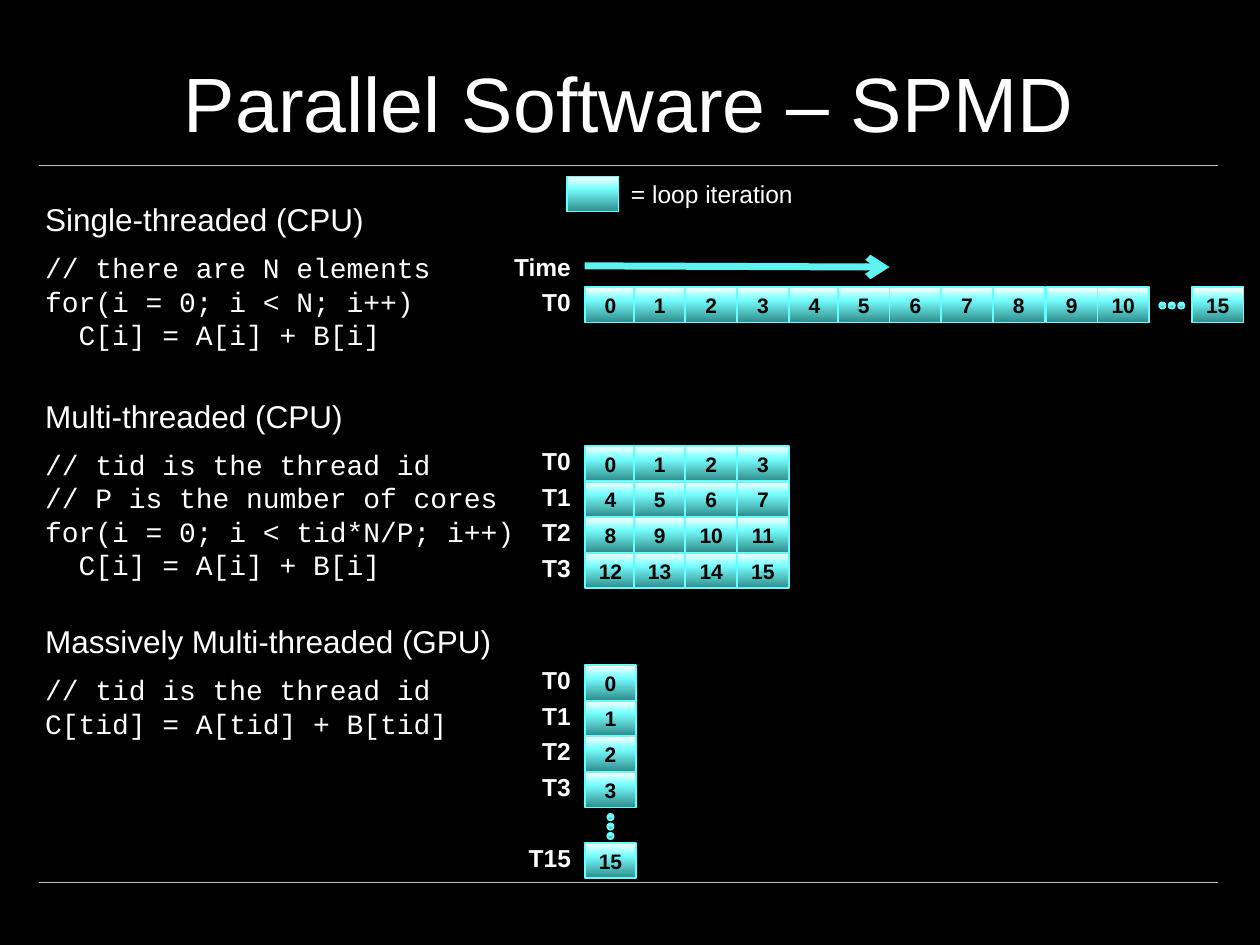
from dataclasses import dataclass

from lxml import etree
from pptx import Presentation
from pptx.dml.color import RGBColor
from pptx.enum import shapes, text
from pptx.oxml import ns, parse_xml
from pptx.util import Inches, Pt


@dataclass(frozen=True)
class Theme:
    back: str = "000000"
    ink: str = "FFFFFF"
    dark: str = "000000"
    rule: str = "BFBFBF"
    edge: str = "66FFFF"
    stops: tuple = ((0, "2E8B8B"), (65, "78FFFF"), (100, "FFFFFF"))
    sans: str = "Arial"
    mono: str = "Courier New"
    title: int = 44
    head: int = 18
    code: int = 16
    label: int = 14
    cell: int = 12


T = Theme()
MID, LEFT, RIGHT = text.PP_ALIGN.CENTER, text.PP_ALIGN.LEFT, text.PP_ALIGN.RIGHT

TITLE = "Parallel Software – SPMD"
LEGEND = "= loop iteration"
# top, heading, heading width, code width, code height, code lines
PARTS = [
    (1.54, "Single-threaded (CPU)", 2.76, 3.3, 0.91,
     ["// there are N elements", "for(i = 0; i < N; i++)", "  C[i] = A[i] + B[i]"]),
    (3.1, "Multi-threaded (CPU)", 2.59, 3.97, 1.18,
     ["// tid is the thread id", "// P is the number of cores",
      "for(i = 0; i < tid*N/P; i++)", "  C[i] = A[i] + B[i]"]),
    (4.89, "Massively Multi-threaded (GPU)", 3.78, 3.43, 0.64,
     ["// tid is the thread id", "C[tid] = A[tid] + B[tid]"]),
]
# top of the first row, then the iterations each thread runs
GRIDS = [
    (2.28, [range(11)]),
    (3.54, [range(n, n + 4) for n in range(0, 16, 4)]),
    (5.28, [[n] for n in range(4)]),
]
LAST = 15
COLS = [4.64, 5.03, 5.44, 5.85, 6.26, 6.65, 7.06, 7.47, 7.88, 8.3, 8.71]
WIDE, HIGH, STEP = 0.41, 0.28, 0.283
DOT, GAP = 0.05, 0.075
END_X, END_Y = 9.46, 6.69


def color(code):
    return RGBColor.from_string(code)


def write(frame, lines, size, ink=T.ink, font=T.sans, bold=False, align=LEFT):
    for i, line in enumerate(lines):
        para = frame.paragraphs[0] if i == 0 else frame.add_paragraph()
        para.alignment = align
        run = para.add_run()
        run.text = line
        run.font.size, run.font.name, run.font.bold = Pt(size), font, bold
        run.font.color.rgb = color(ink)


def add_text(home, box, lines, size, **look):
    frame = home.add_textbox(*map(Inches, box)).text_frame
    frame.word_wrap = False
    frame.auto_size = text.MSO_AUTO_SIZE.SHAPE_TO_FIT_TEXT
    write(frame, lines, size, **look)


def add_line(home, start, end, ink, width):
    line = home.add_connector(shapes.MSO_CONNECTOR.STRAIGHT,
                              *map(Inches, (*start, *end)))
    line.line.color.rgb = color(ink)
    line.line.width = Pt(width)
    etree.SubElement(line.element.spPr, ns.qn("a:effectLst"))
    return line


def add_glossy(home, kind, box):
    """Add a shape shaded from dark at its foot to white at its top."""
    shape = home.add_shape(kind, *map(Inches, box))
    shape.shadow.inherit = False
    shape.line.color.rgb = color(T.edge)
    shape.line.width = Pt(1)
    stops = "".join(f'<a:gs pos="{at * 1000}"><a:srgbClr val="{ink}"/></a:gs>'
                    for at, ink in T.stops)
    fill = parse_xml(f'<a:gradFill {ns.nsdecls("a")}><a:gsLst>{stops}</a:gsLst>'
                     '<a:lin ang="16200000" scaled="0"/></a:gradFill>')
    shape.element.spPr.find(ns.qn("a:prstGeom")).addnext(fill)
    return shape


def add_cell(home, x, y, num=None):
    shape = add_glossy(home, shapes.MSO_SHAPE.RECTANGLE, (x, y, WIDE, HIGH))
    if num is not None:
        frame = shape.text_frame
        frame.vertical_anchor = text.MSO_ANCHOR.MIDDLE
        write(frame, [str(num)], T.cell, ink=T.dark, bold=True, align=MID)


def add_dots(home, x, y, dx, dy):
    group = home.add_group_shape().shapes
    for i in range(3):
        add_glossy(group, shapes.MSO_SHAPE.OVAL, (x + i * dx, y + i * dy, DOT, DOT))


def add_label(home, word, y, width=0.43):
    """Add a bold label that ends just left of the first column."""
    add_text(home, (COLS[0] - 0.01 - width, y - 0.05, width, 0.34), [word],
             T.label, bold=True, align=RIGHT)


def add_arrow(home):
    arrow = add_line(home, (COLS[0], 2.11), (COLS[6], 2.12), T.edge, 4)
    ln = arrow.line._get_or_add_ln()
    alpha = etree.SubElement(ln.find(".//" + ns.qn("a:srgbClr")), ns.qn("a:alpha"))
    alpha.set("val", "95000")
    etree.SubElement(ln, ns.qn("a:tailEnd")).set("type", "arrow")


def main():
    deck = Presentation()
    deck.slide_width, deck.slide_height = Inches(10), Inches(7.5)
    slide = deck.slides.add_slide(deck.slide_layouts[6])
    slide.background.fill.solid()
    slide.background.fill.fore_color.rgb = color(T.back)
    home = slide.shapes

    for y in (1.31, 7):
        add_line(home, (0.31, y), (9.67, y), T.rule, 0.25)
    frame = home.add_textbox(*map(Inches, (0.7, 0.12, 8.59, 1.1))).text_frame
    frame.word_wrap = True
    frame.vertical_anchor = text.MSO_ANCHOR.BOTTOM
    write(frame, [TITLE], T.title, align=MID)

    for top, head, wide, span, high, code in PARTS:
        group = home.add_group_shape().shapes
        add_text(group, (0.26, top, wide, 0.4), [head], T.head)
        add_text(group, (0.26, top + 0.4, span, high), code, T.code, font=T.mono)

    for top, rows in GRIDS:
        for i, row in enumerate(rows):
            y = top + i * STEP
            for x, num in zip(COLS, row):
                add_cell(home, x, y, num)
            add_label(home, f"T{i}", y)

    add_dots(home, 9.2, 2.4, GAP, 0)
    add_cell(home, END_X, GRIDS[0][0], LAST)
    add_dots(home, COLS[0] + (WIDE - DOT) / 2, 6.46, 0, GAP)
    add_cell(home, COLS[0], END_Y, LAST)
    add_label(home, f"T{LAST}", END_Y, 0.54)

    add_cell(home, 4.5, 1.4)
    add_text(home, (4.91, 1.37, 1.5, 0.34), [LEGEND], T.label)
    add_label(home, "Time", 2, 0.66)
    add_arrow(home)
    deck.save("out.pptx")


if __name__ == "__main__":
    main()
